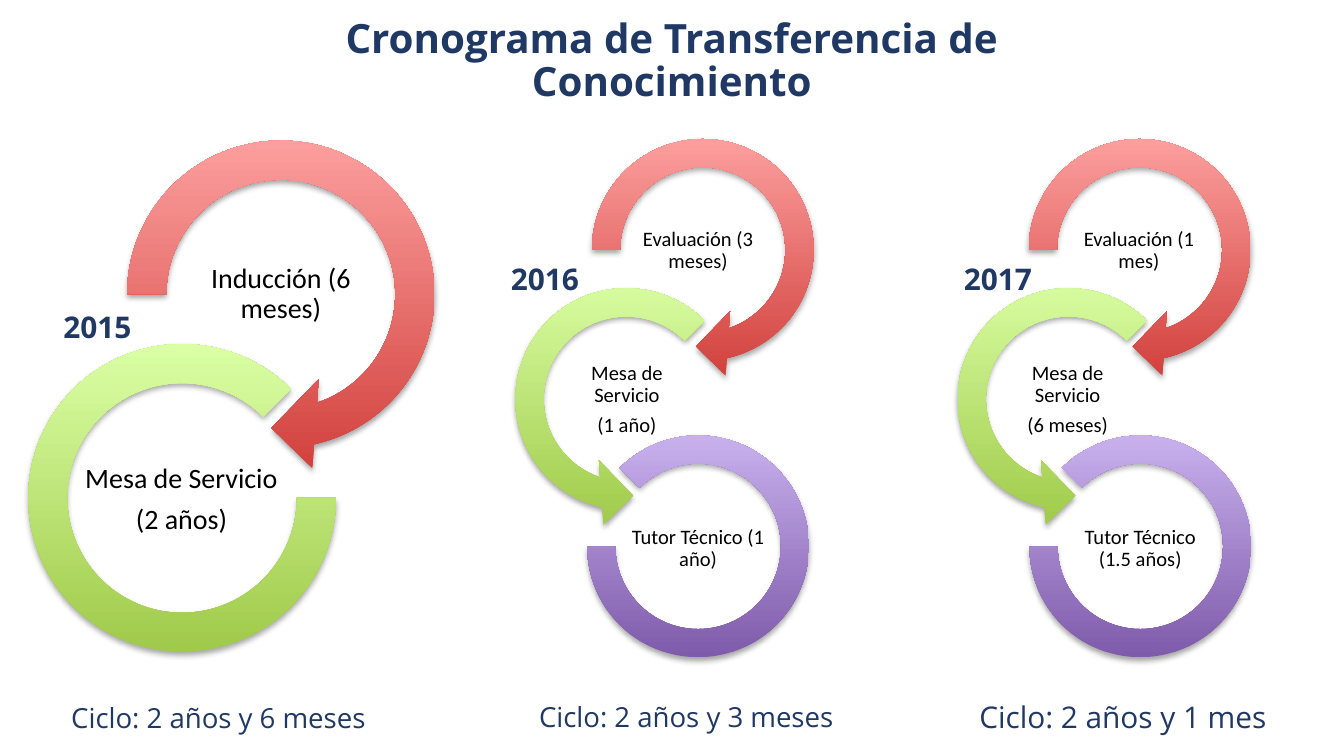
from lxml import etree
from pptx import Presentation
from pptx.dml.color import RGBColor
from pptx.enum.shapes import MSO_SHAPE as SHAPE
from pptx.enum.text import MSO_ANCHOR as ANCHOR, PP_ALIGN as ALIGN
from pptx.oxml.ns import qn
from pptx.util import Pt

COLORS = {"navy": "203864", "black": "000000"}
# Dark end (bottom) and light end (top) of each ring
GRADIENTS = {
    "red": ("D1403C", "FFA6A5"),
    "green": ("A0CA4A", "DAFFA5"),
    "purple": ("7F5BAB", "C8B0ED"),
}
HEADING_FONT, LABEL_FONT = "Open Sans", "Calibri"

# Ring outlines: preset shape and adjustments
RINGS = {
    "arrow": (SHAPE.CIRCULAR_ARROW, (0.11, 11.42, 45, 108, 0.125)),
    "left arrow": (SHAPE.LEFT_CIRCULAR_ARROW, (0.11, 11.42, 63, 189, 0.125)),
    "lower arc": (SHAPE.BLOCK_ARC, (0, 189, 0.127)),
    "last arc": (SHAPE.BLOCK_ARC, (135, 108, 0.127)),
}
# Kind of step: ring, gradient, ring top, ring size, label top
BIG_STEPS = [
    ("arrow", "red", 61.9, 191.5, 131),
    ("lower arc", "green", 184.3, 164.9, 241.2),
]
SMALL_STEPS = [
    ("arrow", "red", 64.8, 138.2, 115.2),
    ("left arrow", "green", 144.7, 138.2, 195.1),
    ("last arc", "purple", 233.3, 118.8, 275),
]
BIG_LABEL, SMALL_LABEL = (106.6, 53.3, 15), (77, 38.2, 11)  # width, height, font size

TITLE = "Cronograma de Transferencia de Conocimiento"
# Each step: ring left, label left, label lines
YEARS = [
    {"year": ("2015", 15.8, 162), "cycle": ("Ciclo: 2 años y 6 meses", 21.6, 372.2, 14.8),
     "kinds": BIG_STEPS, "label": BIG_LABEL,
     "steps": [(54.7, 97.2, ["Inducción (6 meses)"]),
               (15.1, 43.9, ["Mesa de Servicio", "(2 años)"])]},
    {"year": ("2016", 255.6, 136.1), "cycle": ("Ciclo: 2 años y 3 meses", 272.2, 371.5, 14.8),
     "kinds": SMALL_STEPS, "label": SMALL_LABEL,
     "steps": [(307.4, 335.5, ["Evaluación (3 meses)"]),
               (266.4, 297.4, ["Mesa de Servicio", "(1 año)"]),
               (314.6, 335.5, ["Tutor Técnico (1 año)"])]},
    {"year": ("2017", 498.2, 136.1), "cycle": ("Ciclo: 2 años y 1 mes", 506.2, 370.8, 16),
     "kinds": SMALL_STEPS, "label": SMALL_LABEL,
     "steps": [(541.4, 571.7, ["Evaluación (1 mes)"]),
               (503.3, 533.5, ["Mesa de Servicio", "(6 meses)"]),
               (551.5, 572.4, ["Tutor Técnico (1.5 años)"])]},
]


def add_text(lines, box, size, font=HEADING_FONT, color="navy", bold=False,
             anchor=ANCHOR.TOP, spacing=1.0, after=0, inset=None):
    tf = slide.shapes.add_textbox(*map(Pt, box)).text_frame
    tf.word_wrap = True
    tf.vertical_anchor = anchor
    if inset is not None:
        tf.margin_left = tf.margin_right = tf.margin_top = tf.margin_bottom = Pt(inset)
    tf.text = "\n".join(lines)
    for p in tf.paragraphs:
        p.alignment = ALIGN.CENTER
        p.line_spacing = spacing
        p.space_after = Pt(after)
        for r in p.runs:
            r.font.name, r.font.size, r.font.bold = font, Pt(size), bold
            r.font.color.rgb = RGBColor.from_string(COLORS[color])


def add_shadow(sp):
    sp.shadow.inherit = False
    effects = sp._element.spPr.find(qn("a:effectLst"))
    shadow = etree.SubElement(effects, qn("a:outerShdw"), blurRad=str(Pt(3.1)),
                              dist=str(Pt(1.8)), dir="5400000", rotWithShape="0")
    color = etree.SubElement(shadow, qn("a:srgbClr"), val=COLORS["black"])
    etree.SubElement(color, qn("a:alpha"), val="35000")


def add_ring(ring, gradient, left, top, size):
    preset, adjustments = RINGS[ring]
    sp = slide.shapes.add_shape(preset, Pt(left), Pt(top), Pt(size), Pt(size))
    for i, value in enumerate(adjustments):
        sp.adjustments[i] = value
    sp.fill.gradient()
    sp.fill.gradient_angle = 90
    for i, (stop, color) in enumerate(zip(sp.fill.gradient_stops, GRADIENTS[gradient])):
        stop.position = i
        stop.color.rgb = RGBColor.from_string(color)
    sp.line.fill.background()
    add_shadow(sp)


prs = Presentation()
prs.slide_width, prs.slide_height = Pt(720), Pt(405)
slide = prs.slides.add_slide(prs.slide_layouts[6])

# Title
add_text([TITLE], (156.2, 7.2, 407.5, 51.8), 21.6, bold=True,
         anchor=ANCHOR.MIDDLE, spacing=0.9)

# One chain of rings per year
for column in YEARS:
    width, height, size = column["label"]
    for kind, step in zip(column["kinds"], column["steps"]):
        ring, gradient, top, diameter, label_top = kind
        left, label_left, lines = step
        add_ring(ring, gradient, left, top, diameter)
        add_text(lines, (label_left, label_top, width, height), size, LABEL_FONT, "black",
                 anchor=ANCHOR.MIDDLE, spacing=0.9, after=0.35 * size, inset=0.7)

# Year headings and cycle lengths
for column in YEARS:
    year, left, top = column["year"]
    add_text([year], (left, top, 72.7, 25.2), 16, bold=True)
    cycle, left, top, size = column["cycle"]
    add_text([cycle], (left, top, 190.8, 25.2), size)

prs.save("out.pptx")
